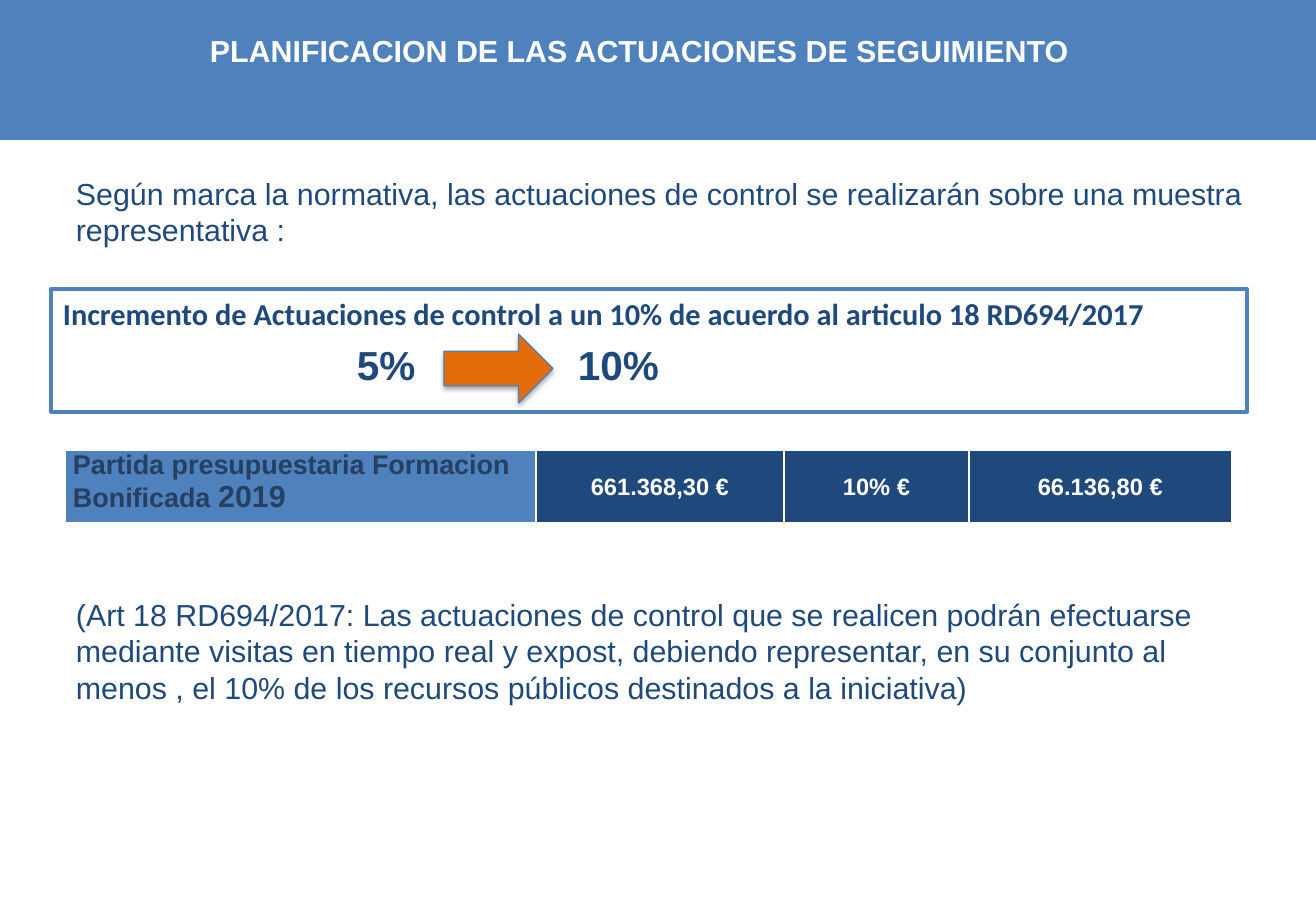
from lxml import etree
from pptx import Presentation
from pptx.dml.color import RGBColor
from pptx.enum.shapes import MSO_SHAPE
from pptx.enum.text import MSO_ANCHOR, PP_ALIGN
from pptx.oxml import parse_xml
from pptx.oxml.ns import nsdecls, qn
from pptx.util import Pt

RECT, ARROW = MSO_SHAPE.RECTANGLE, MSO_SHAPE.RIGHT_ARROW
TOP, MIDDLE = MSO_ANCHOR.TOP, MSO_ANCHOR.MIDDLE
LEFT, CENTER = PP_ALIGN.LEFT, PP_ALIGN.CENTER
TITLE_ONLY = 5
W, H = 1316, 911
BLUE, NAVY, INK = "4F81BD", "1F497D", "254061"
WHITE, ORANGE, EDGE = "FFFFFF", "E46C0A", "4B7EBC"


def px(n):
    return n * 7526


def rgb(color):
    return RGBColor.from_string(color)


def style(r, size, color, bold=False, font="Arial"):
    r.font.name, r.font.size, r.font.bold = font, Pt(size), bold
    r.font.color.rgb = rgb(color)


def write(tf, text, size, color, bold=False, font="Arial", align=LEFT):
    tf.word_wrap = True
    tf.vertical_anchor = TOP
    p = tf.paragraphs[0]
    p.text = text
    p.alignment = align
    style(p.runs[0], size, color, bold, font)


def add_box(slide, kind, box, fill, line=None, width=1):
    sp = slide.shapes.add_shape(kind, *map(px, box))
    sp.shadow.inherit = False
    sp.fill.solid()
    sp.fill.fore_color.rgb = rgb(fill)
    if line:
        sp.line.color.rgb = rgb(line)
        sp.line.width = Pt(width)
    else:
        sp.line.fill.background()
    return sp


def add_text(slide, box, text, size, bold=False):
    sp = slide.shapes.add_textbox(*map(px, box))
    write(sp.text_frame, text, size, NAVY, bold)


def add_header(slide, box):
    x, y, w, h = box
    band = add_box(slide, RECT, box, BLUE)
    title = slide.shapes.title
    title._element.addprevious(band._element)  # band goes behind the title
    title.left, title.top = px(x + 190), px(y + 26)
    title.width, title.height = px(899), px(49)
    write(title.text_frame, "PLANIFICACION DE LAS ACTUACIONES DE SEGUIMIENTO",
          18, WHITE, True, align=CENTER)


def add_increase(slide, box):
    x, y, w, h = box
    frame = add_box(slide, RECT, box, WHITE, BLUE, 2)
    write(frame.text_frame, "Incremento de Actuaciones de control a un 10% de "
          "acuerdo al articulo 18 RD694/2017", 18, NAVY, True, "Calibri")
    add_text(slide, (x + 294, y + 45, 96, 61), "5%", 24, True)
    add_text(slide, (x + 515, y + 45, 146, 61), "10%", 24, True)
    arrow = add_box(slide, ARROW, (x + 393, y + 45, 109, 69), ORANGE, EDGE, 0.75)
    effects = arrow._element.spPr.find(qn("a:effectLst"))
    effects.append(parse_xml(
        f'<a:outerShdw {nsdecls("a")} blurRad="40000" dist="23000" dir="5400000" '
        'rotWithShape="0"><a:srgbClr val="000000"><a:alpha val="35000"/>'
        '</a:srgbClr></a:outerShdw>'))


def set_borders(cell):
    tc_pr = cell._tc.get_or_add_tcPr()
    for i, (side, width) in enumerate((("L", 1), ("R", 1), ("T", 1), ("B", 3))):
        ln = etree.Element(qn(f"a:ln{side}"), w=str(Pt(width)))
        fill = etree.SubElement(ln, qn("a:solidFill"))
        etree.SubElement(fill, qn("a:srgbClr"), val=WHITE)
        tc_pr.insert(i, ln)


def add_budget(slide, box):
    widths = (471, 248, 185, 263)
    texts = ("Partida presupuestaria Formacion Bonificada ",
             "661.368,30 €", "10% €", "66.136,80 €")
    table = slide.shapes.add_table(1, len(texts), *map(px, box)).table
    table.rows[0].height = px(box[3])
    for i, (width, text) in enumerate(zip(widths, texts)):
        table.columns[i].width = px(width)
        cell = table.cell(0, i)
        cell.margin_left = cell.margin_right = px(8)
        cell.margin_top = cell.margin_bottom = 0
        cell.fill.solid()
        cell.fill.fore_color.rgb = rgb(NAVY if i else BLUE)
        set_borders(cell)
        if i:
            write(cell.text_frame, text, 14, WHITE, True, align=CENTER)
        else:
            write(cell.text_frame, text, 16, INK, True)
            year = cell.text_frame.paragraphs[0].add_run()
            year.text = "2019"
            style(year, 18, INK, True)
        cell.vertical_anchor = MIDDLE if i else TOP


def main():
    prs = Presentation()
    prs.slide_width, prs.slide_height = px(W), px(H)
    slide = prs.slides.add_slide(prs.slide_layouts[TITLE_ONLY])

    # Header band and title
    add_header(slide, (0, 0, W, 140))
    # Introduction
    add_text(slide, (64, 169, 1235, 86), "Según marca la normativa, las "
             "actuaciones de control se realizarán sobre una muestra "
             "representativa :", 18)
    # Rise from 5% to 10%
    add_increase(slide, (51, 289, 1196, 123))
    # Budget line
    add_budget(slide, (65, 450, 1167, 74))
    # Legal reference
    add_text(slide, (64, 590, 1196, 123), "(Art 18 RD694/2017: Las actuaciones "
             "de control que se realicen podrán efectuarse mediante visitas en "
             "tiempo real y expost, debiendo representar, en su conjunto al "
             "menos , el 10% de los recursos públicos destinados a la "
             "iniciativa)", 18)
    prs.save("out.pptx")


if __name__ == "__main__":
    main()
